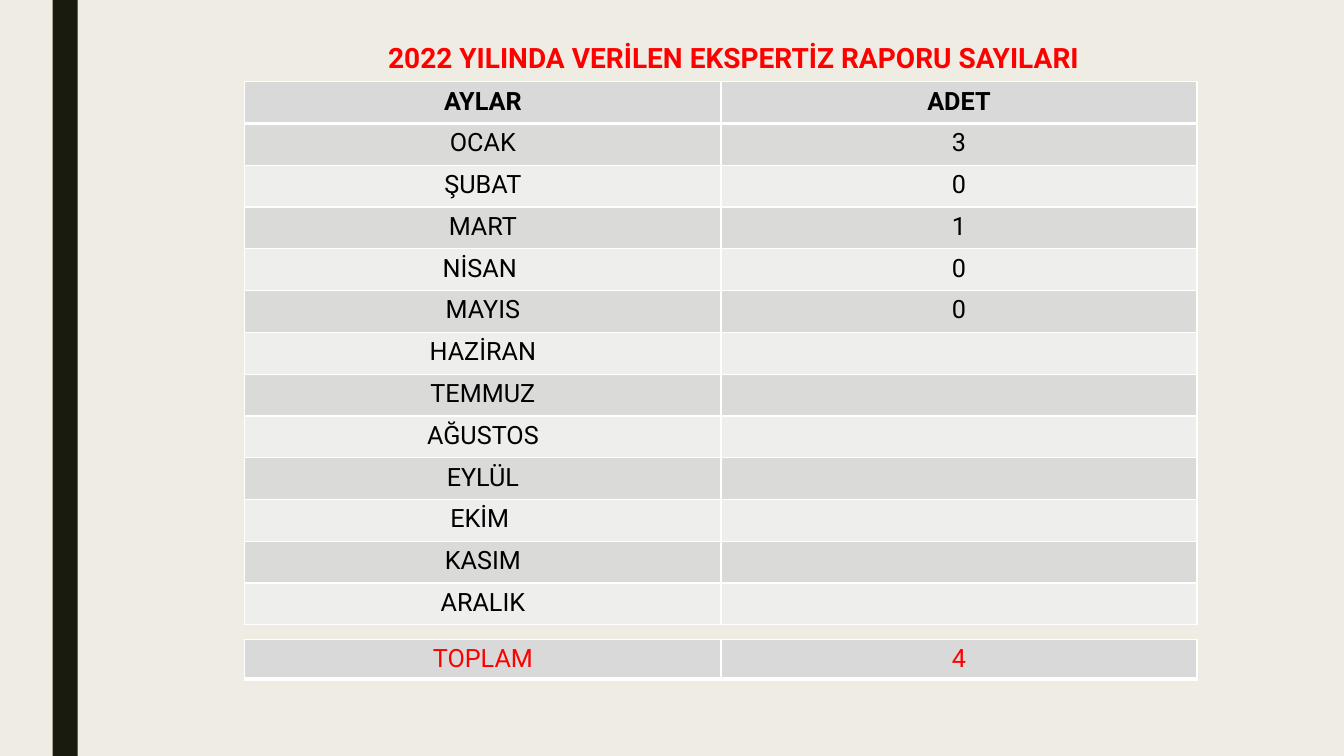
from lxml.etree import SubElement
from pptx import Presentation
from pptx.dml.color import RGBColor
from pptx.enum.shapes import MSO_SHAPE as Shape
from pptx.enum.text import MSO_ANCHOR as Anchor, PP_ALIGN as Align
from pptx.oxml.ns import qn
from pptx.util import Pt

FONT = "Roboto"
COLORS = {
    "background": "EFEDE3",
    "bar": "191B0E",
    "accent": "FF0000",
    "text": "000000",
    "header": "D9D9D9",
    "dark_band": "DADBD9",
    "light_band": "EEEEED",
    "border": "FFFFFF",
}
MONTHS = [
    ("OCAK", "3"), ("ŞUBAT", "0"), ("MART", "1"), ("NİSAN ", "0"),
    ("MAYIS", "0"), ("HAZİRAN", ""), ("TEMMUZ", ""), ("AĞUSTOS", ""),
    ("EYLÜL", ""), ("EKİM ", ""), ("KASIM", ""), ("ARALIK", ""),
]
TABLE_LEFT, TABLE_WIDTH = 174.9, 680.2


def format_text(paragraph, size, color, bold):
    paragraph.alignment = Align.CENTER
    for run in paragraph.runs:
        run.font.name = FONT
        run.font.size = Pt(size)
        run.font.bold = bold
        run.font.color.rgb = RGBColor.from_string(COLORS[color])


def add_count_table(slide, top, row_height, rows):
    frame = slide.shapes.add_table(
        len(rows), 2, Pt(TABLE_LEFT), Pt(top), Pt(TABLE_WIDTH), Pt(row_height * len(rows)))
    for row_index, (values, fill, color, bold) in enumerate(rows):
        for column_index, value in enumerate(values):
            cell = frame.table.cell(row_index, column_index)
            cell.text = value
            format_text(cell.text_frame.paragraphs[0], 18, color, bold)
            widths = {
                "L": 1,
                "R": 1,
                "T": 3 if row_index == 1 else 1,
                "B": 3 if row_index == 0 else 1,
            }
            properties = cell._tc.get_or_add_tcPr()
            for side, width in widths.items():
                line = SubElement(properties, qn(f"a:ln{side}"), w=str(Pt(width)))
                line_fill = SubElement(line, qn("a:solidFill"))
                SubElement(line_fill, qn("a:srgbClr"), val=COLORS["border"])
            cell.fill.solid()
            cell.fill.fore_color.rgb = RGBColor.from_string(COLORS[fill])


presentation = Presentation()
presentation.slide_width = Pt(960)
presentation.slide_height = Pt(540)
slide = presentation.slides.add_slide(presentation.slide_layouts[5])
slide.background.fill.solid()
slide.background.fill.fore_color.rgb = RGBColor.from_string(COLORS["background"])

bar = slide.shapes.add_shape(Shape.RECTANGLE, Pt(37.5), Pt(0), Pt(18), Pt(540))
bar.shadow.inherit = False
bar.fill.solid()
bar.fill.fore_color.rgb = RGBColor.from_string(COLORS["bar"])
bar.line.fill.background()

title = slide.shapes.title
title.left, title.top, title.width, title.height = Pt(260.6), Pt(26.6), Pt(527), Pt(31.7)
title.text_frame.text = "2022 YILINDA VERİLEN EKSPERTİZ RAPORU SAYILARI"
title.text_frame.word_wrap = True
title.text_frame.vertical_anchor = Anchor.MIDDLE
title_paragraph = title.text_frame.paragraphs[0]
title_paragraph.line_spacing = 0.89
format_text(title_paragraph, 20, "accent", True)

month_rows = [(("AYLAR", "ADET"), "header", "text", True)]
for index, month in enumerate(MONTHS):
    band = "light_band" if index % 2 else "dark_band"
    month_rows.append((month, band, "text", False))
add_count_table(slide, 58.3, 29.86, month_rows)
add_count_table(slide, 456.6, 28.5, [(("TOPLAM", "4"), "header", "accent", False)])

presentation.save("out.pptx")
